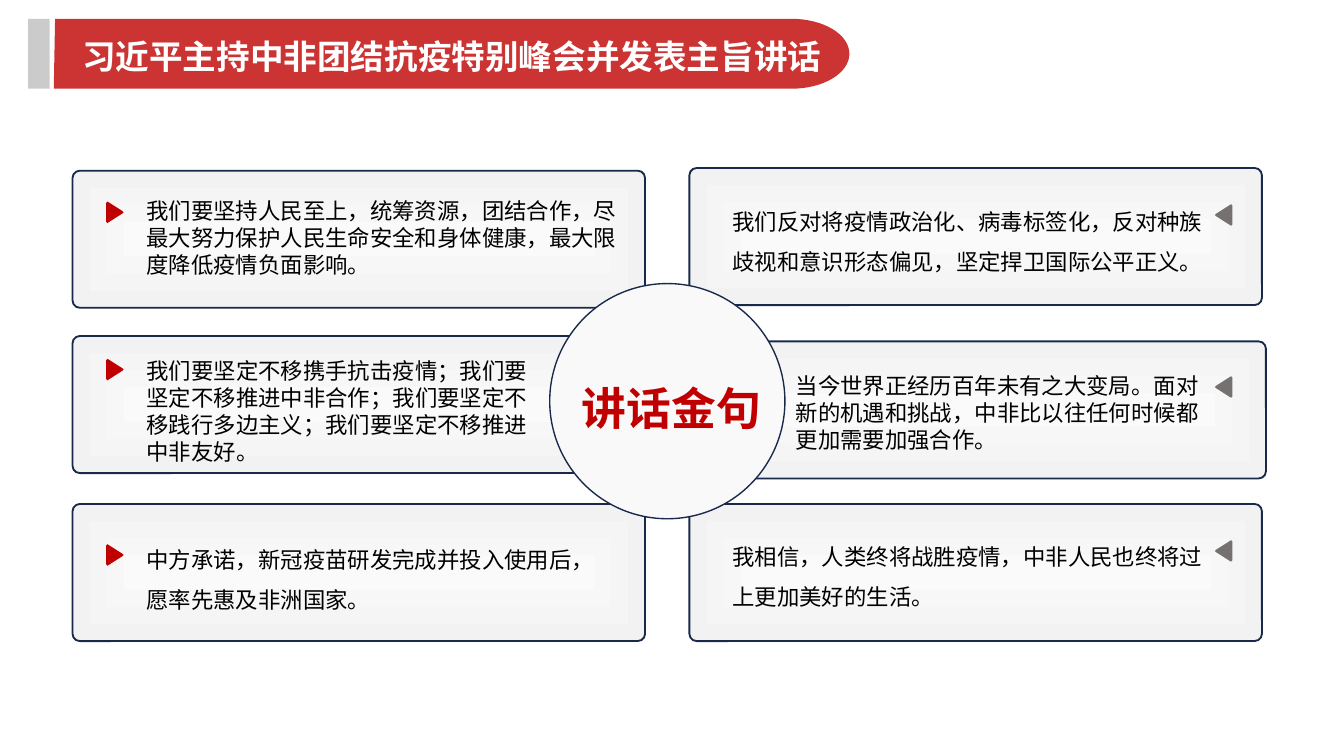
from dataclasses import dataclass
from math import cos, pi, sin

from lxml.etree import SubElement
from pptx import Presentation
from pptx.dml.color import RGBColor
from pptx.enum.shapes import MSO_SHAPE
from pptx.enum.text import MSO_ANCHOR, MSO_AUTO_SIZE, PP_ALIGN
from pptx.oxml.ns import qn
from pptx.util import Inches, Pt


@dataclass(frozen=True)
class Theme:
    """Colours, type sizes and font of the slide."""
    font: str = "Noto Sans CJK SC"
    red: str = "C00000"
    grey: str = "767171"
    bar: str = "BFBFBF"
    navy: str = "19294B"
    black: str = "000000"
    white: str = "FFFFFF"
    card_inner: str = "FAFAFA"
    card_outer: str = "F2F2F2"
    hub: str = "F9F9F9"
    title_size: int = 18
    hub_size: int = 24
    body_size: int = 12


THEME = Theme()
CARD_W, CARD_H = 4.26, 1.02

LEFT_CARDS = [
    dict(x=0.54, y=1.27, text_at=(0.48, 0.16, 3.66, 0.68), arrow_at=(0.25, 0.23),
         text="我们要坚持人民至上，统筹资源，团结合作，尽最大努力保护人民生命安全和身体健康，最大限度降低疫情负面影响。"),
    dict(x=0.54, y=2.5, text_at=(0.48, 0.12, 2.99, 0.88), arrow_at=(0.25, 0.17),
         text="我们要坚定不移携手抗击疫情；我们要坚定不移推进中非合作；我们要坚定不移践行多边主义；我们要坚定不移推进中非友好。"),
    dict(x=0.54, y=3.75, text_at=(0.48, 0.17, 3.5, 0.68), arrow_at=(0.25, 0.3), spacing=1.5,
         text="中方承诺，新冠疫苗研发完成并投入使用后，愿率先惠及非洲国家。"),
]
RIGHT_CARDS = [
    dict(x=5.13, y=1.25, text_at=(0.25, 0.16, 3.65, 0.68), arrow_at=(3.91, 0.27), spacing=1.5,
         text="我们反对将疫情政治化、病毒标签化，反对种族歧视和意识形态偏见，坚定捍卫国际公平正义。"),
    dict(x=5.16, y=2.54, text_at=(0.69, 0.19, 3.15, 0.68), arrow_at=(3.88, 0.26),
         text="当今世界正经历百年未有之大变局。面对新的机遇和挑战，中非比以往任何时候都更加需要加强合作。"),
    dict(x=5.13, y=3.75, text_at=(0.25, 0.15, 3.7, 0.68), arrow_at=(3.91, 0.27), spacing=1.5,
         text="我相信，人类终将战胜疫情，中非人民也终将过上更加美好的生活。"),
]


def paint(sp, fill=None, line=None, width=1, alpha=None):
    """Set fill, outline and opacity of a shape and drop its shadow."""
    sp.shadow.inherit = False
    if fill:
        sp.fill.solid()
        sp.fill.fore_color.rgb = RGBColor.from_string(fill)
    if alpha:
        color = sp.element.spPr.find(qn("a:solidFill"))[0]
        SubElement(color, qn("a:alpha"), val=str(alpha * 1000))
    if line:
        sp.line.color.rgb = RGBColor.from_string(line)
        sp.line.width = Pt(width)
    else:
        sp.line.fill.background()


def add_polygon(s, points):
    """Add a closed outline through points given in inches."""
    start, *rest = [(Inches(x), Inches(y)) for x, y in points]
    builder = s.shapes.build_freeform(*start)
    builder.add_line_segments(rest, close=True)
    return builder.convert_to_shape()


def write(sp, text, size, color, bold=False, spacing=1.0):
    """Fill a text shape with one formatted paragraph."""
    tf = sp.text_frame
    tf.word_wrap = True
    tf.auto_size = MSO_AUTO_SIZE.SHAPE_TO_FIT_TEXT
    tf.vertical_anchor = MSO_ANCHOR.TOP
    tf.margin_left = tf.margin_right = Inches(0.07)
    tf.margin_top = tf.margin_bottom = Inches(0.04)
    p = tf.paragraphs[0]
    p.text = text
    p.alignment = PP_ALIGN.LEFT
    p.line_spacing = spacing
    p.font.size = Pt(size)
    p.font.bold = bold
    p.font.color.rgb = RGBColor.from_string(color)
    p.font.name = THEME.font
    for props in sp.element.iter(qn("a:defRPr")):
        SubElement(props, qn("a:ea"), typeface=THEME.font)


def add_text(s, x, y, w, h, *args, **kwargs):
    """Add a text box and write into it."""
    write(s.shapes.add_textbox(*map(Inches, (x, y, w, h))), *args, **kwargs)


def add_header(s, x, y, w, h):
    """Place the grey bar, the round-ended banner and the title."""
    bar = s.shapes.add_shape(MSO_SHAPE.RECTANGLE, *map(Inches, (x, y, 0.16, h)))
    paint(bar, THEME.bar, alpha=80)

    rx, ry, steps = 0.43, h / 2, 32
    angles = [-pi / 2 + pi * i / steps for i in range(steps + 1)]
    arc = [(x + w - rx + rx * cos(a), y + ry + ry * sin(a)) for a in angles]
    banner = add_polygon(s, [(x + 0.19, y + h), (x + 0.2, y), *arc])
    paint(banner, THEME.red, alpha=80)

    title = s.shapes.title
    title.left, title.top, title.width, title.height = map(
        Inches, (x + 0.33, y + 0.09, 5.71, 0.38))
    write(title, "习近平主持中非团结抗疫特别峰会并发表主旨讲话",
          THEME.title_size, THEME.white, bold=True)
    title.element.getparent().append(title.element)


def add_arrow(s, x, y, color, flip):
    """Add a small blunt triangle pointing right, or left when flipped."""
    w = 0.13
    outline = [(0, 0.01), (0.01, 0), (0.12, 0.07), (w, 0.08),
               (0.12, 0.09), (0.01, 0.16), (0, 0.15)]
    points = [(x + (w - dx if flip else dx), y + dy) for dx, dy in outline]
    paint(add_polygon(s, points), color)


def add_card(s, x, y, text_at, arrow_at, text, color, flip=False, spacing=1.0):
    """Place a gradient card with its quotation and arrow."""
    card = s.shapes.add_shape(MSO_SHAPE.ROUNDED_RECTANGLE,
                              *map(Inches, (x, y, CARD_W, CARD_H)))
    card.adjustments[0] = 0.053
    card.fill.gradient()
    for stop, shade in zip(card.fill.gradient_stops, (THEME.card_inner, THEME.card_outer)):
        stop.color.rgb = RGBColor.from_string(shade)
    grad = card.element.spPr.find(qn("a:gradFill"))
    grad.remove(grad.find(qn("a:lin")))
    focus = SubElement(grad, qn("a:path"), {"path": "rect"})
    SubElement(focus, qn("a:fillToRect"), {side: "50000" for side in "ltrb"})
    paint(card, line=THEME.navy)

    dx, dy, w, h = text_at
    add_text(s, x + dx, y + dy, w, h, text, THEME.body_size, THEME.black, spacing=spacing)
    add_arrow(s, x + arrow_at[0], y + arrow_at[1], color, flip)


def add_hub(s, x, y, d):
    """Place the central circle and its label."""
    circle = s.shapes.add_shape(MSO_SHAPE.OVAL, *map(Inches, (x, y, d, d)))
    paint(circle, THEME.hub, THEME.navy, 0.75)
    add_text(s, x + 0.17, y + 0.68, 1.5, 0.48, "讲话金句",
             THEME.hub_size, THEME.red, bold=True)


def main():
    """Build and save the slide."""
    prs = Presentation()
    prs.slide_width = Inches(10)
    prs.slide_height = prs.slide_width * 9 // 16
    s = prs.slides.add_slide(prs.slide_layouts[5])
    add_header(s, 0.21, 0.14, 6.11, 0.52)
    for card in RIGHT_CARDS:
        add_card(s, **card, color=THEME.grey, flip=True)
    for card in LEFT_CARDS:
        add_card(s, **card, color=THEME.red)
    add_hub(s, 4.09, 2.11, 1.75)
    prs.save("out.pptx")


if __name__ == "__main__":
    main()
